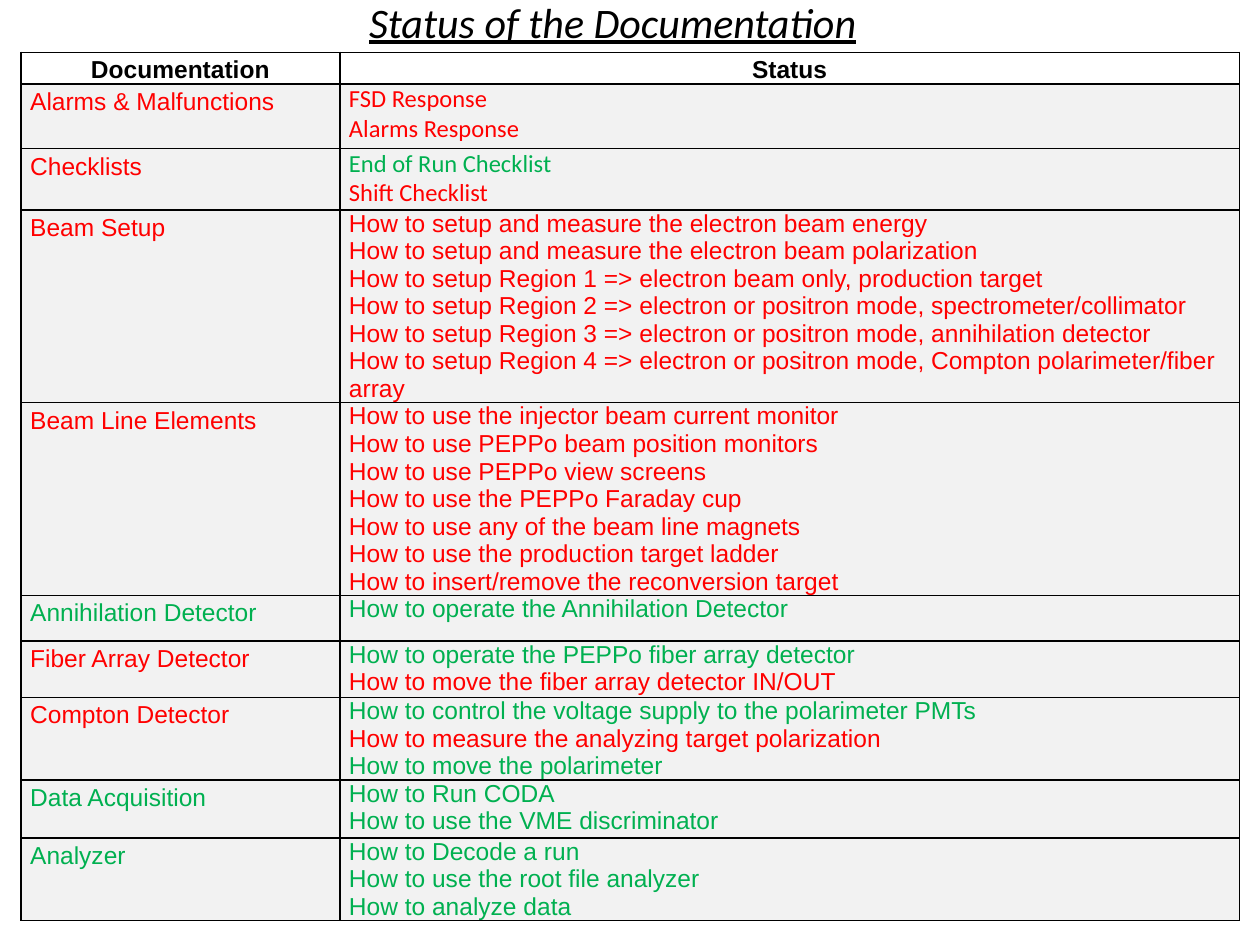
from lxml import etree
from pptx import Presentation
from pptx.dml.color import RGBColor
from pptx.enum.text import MSO_ANCHOR, MSO_AUTO_SIZE, PP_ALIGN
from pptx.oxml.ns import qn
from pptx.util import Pt

TOP = MSO_ANCHOR.TOP
FIT_SHAPE = MSO_AUTO_SIZE.SHAPE_TO_FIT_TEXT
LEFT, CENTER = PP_ALIGN.LEFT, PP_ALIGN.CENTER

COLORS = {"black": "000000", "open": "FF0000", "done": "00B050", "panel": "F2F2F2"}
TITLE_FONT = {"name": "Calibri", "size": Pt(24), "italic": True, "underline": True}
HEADER_FONT = {"name": "Arial", "size": Pt(14), "bold": True}
BODY_FONT = {"name": "Arial", "size": Pt(14), "bold": False}
CHECK_FONT = {**BODY_FONT, "name": "Calibri"}
LABEL_FORMAT = {"line_spacing": 1.15, "space_after": Pt(10), "alignment": LEFT}
HEADER_FORMAT = {**LABEL_FORMAT, "alignment": CENTER}
LIST_FORMAT = {"alignment": LEFT}
CELL_FORMAT = {"margin_left": Pt(5.25), "margin_right": Pt(5.25), "margin_top": 0,
               "margin_bottom": 0, "vertical_anchor": TOP}

COLUMN_WIDTHS = [182.2, 514.1]
HEADER_HEIGHT = 18
# Row height, topic, topic status, font of the list, [(document, status)]
TOPICS = [
    (36.9, "Alarms & Malfunctions", "open", CHECK_FONT, [
        ("FSD Response", "open"),
        ("Alarms Response", "open")]),
    (35, "Checklists", "open", CHECK_FONT, [
        ("End of Run Checklist", "done"),
        ("Shift Checklist", "open")]),
    (110, "Beam Setup", "open", BODY_FONT, [
        ("How to setup and measure the electron beam energy", "open"),
        ("How to setup and measure the electron beam polarization", "open"),
        ("How to setup Region 1 => electron beam only, production target", "open"),
        ("How to setup Region 2 => electron or positron mode, spectrometer/collimator", "open"),
        ("How to setup Region 3 => electron or positron mode, annihilation detector", "open"),
        ("How to setup Region 4 => electron or positron mode, Compton polarimeter/fiber array",
         "open")]),
    (110, "Beam Line Elements", "open", BODY_FONT, [
        ("How to use the injector beam current monitor", "open"),
        ("How to use PEPPo beam position monitors", "open"),
        ("How to use PEPPo view screens", "open"),
        ("How to use the PEPPo Faraday cup", "open"),
        ("How to use any of the beam line magnets", "open"),
        ("How to use the production target ladder", "open"),
        ("How to insert/remove the reconversion target", "open")]),
    (25.9, "Annihilation Detector", "done", BODY_FONT, [
        ("How to operate the Annihilation Detector", "done")]),
    (32.4, "Fiber Array Detector", "open", BODY_FONT, [
        ("How to operate the PEPPo fiber array detector", "done"),
        ("How to move the fiber array detector IN/OUT", "open")]),
    (47, "Compton Detector", "open", BODY_FONT, [
        ("How to control the voltage supply to the polarimeter PMTs", "done"),
        ("How to measure the analyzing target polarization", "open"),
        ("How to move the polarimeter", "done")]),
    (33.1, "Data Acquisition", "done", BODY_FONT, [
        ("How to Run CODA", "done"),
        ("How to use the VME discriminator", "done")]),
    (47.2, "Analyzer", "done", BODY_FONT, [
        ("How to Decode a run", "done"),
        ("How to use the root file analyzer", "done"),
        ("How to analyze data", "done")]),
]


def apply_format(target, values):
    for name, value in values.items():
        setattr(target, name, value)


def write_lines(frame, lines, font, para_format):
    """Write one paragraph for each (text, colour name) pair."""
    for index, (text, color) in enumerate(lines):
        para = frame.add_paragraph() if index else frame.paragraphs[0]
        apply_format(para, para_format)
        span = para.add_run()
        span.text = text
        apply_format(span.font, font)
        span.font.color.rgb = RGBColor.from_string(COLORS[color])


def add_borders(cell):
    properties = cell._tc.get_or_add_tcPr()
    for side in ("a:lnL", "a:lnR", "a:lnT", "a:lnB"):
        line = etree.SubElement(properties, qn(side), w=str(Pt(1)))
        fill = etree.SubElement(line, qn("a:solidFill"))
        etree.SubElement(fill, qn("a:srgbClr"), val=COLORS["black"])


def fill_cell(cell, lines, font, para_format, fill=None):
    apply_format(cell, CELL_FORMAT)
    add_borders(cell)
    if fill:
        cell.fill.solid()
        cell.fill.fore_color.rgb = RGBColor.from_string(COLORS[fill])
    else:
        cell.fill.background()
    write_lines(cell.text_frame, lines, font, para_format)


def add_title(page, left, top, width, height):
    box = page.shapes.add_textbox(Pt(left), Pt(top), Pt(width), Pt(height))
    box.text_frame.word_wrap = False
    box.text_frame.auto_size = FIT_SHAPE
    write_lines(box.text_frame, [("Status of the Documentation", "black")],
                TITLE_FONT, LIST_FORMAT)


def add_status_table(page, left, top):
    heights = [HEADER_HEIGHT] + [topic[0] for topic in TOPICS]
    table = page.shapes.add_table(len(heights), len(COLUMN_WIDTHS), Pt(left), Pt(top),
                                  Pt(sum(COLUMN_WIDTHS)), Pt(sum(heights))).table
    apply_format(table, {"first_row": False, "horz_banding": False})
    for column, width in zip(table.columns, COLUMN_WIDTHS):
        column.width = Pt(width)
    for row, height in zip(table.rows, heights):
        row.height = Pt(height)
    for column, heading in enumerate(("Documentation", "Status")):
        fill_cell(table.cell(0, column), [(heading, "black")], HEADER_FONT, HEADER_FORMAT)
    for row, (_, topic, status, font, documents) in enumerate(TOPICS, start=1):
        fill_cell(table.cell(row, 0), [(topic, status)], BODY_FONT, LABEL_FORMAT, "panel")
        fill_cell(table.cell(row, 1), documents, font, LIST_FORMAT, "panel")


def main():
    deck = Presentation()
    deck.slide_width, deck.slide_height = Pt(720), Pt(540)
    page = deck.slides.add_slide(deck.slide_layouts[6])
    add_status_table(page, 12, 30)
    add_title(page, 203.8, -5.8, 297.4, 36.7)
    deck.save("out.pptx")


if __name__ == "__main__":
    main()
